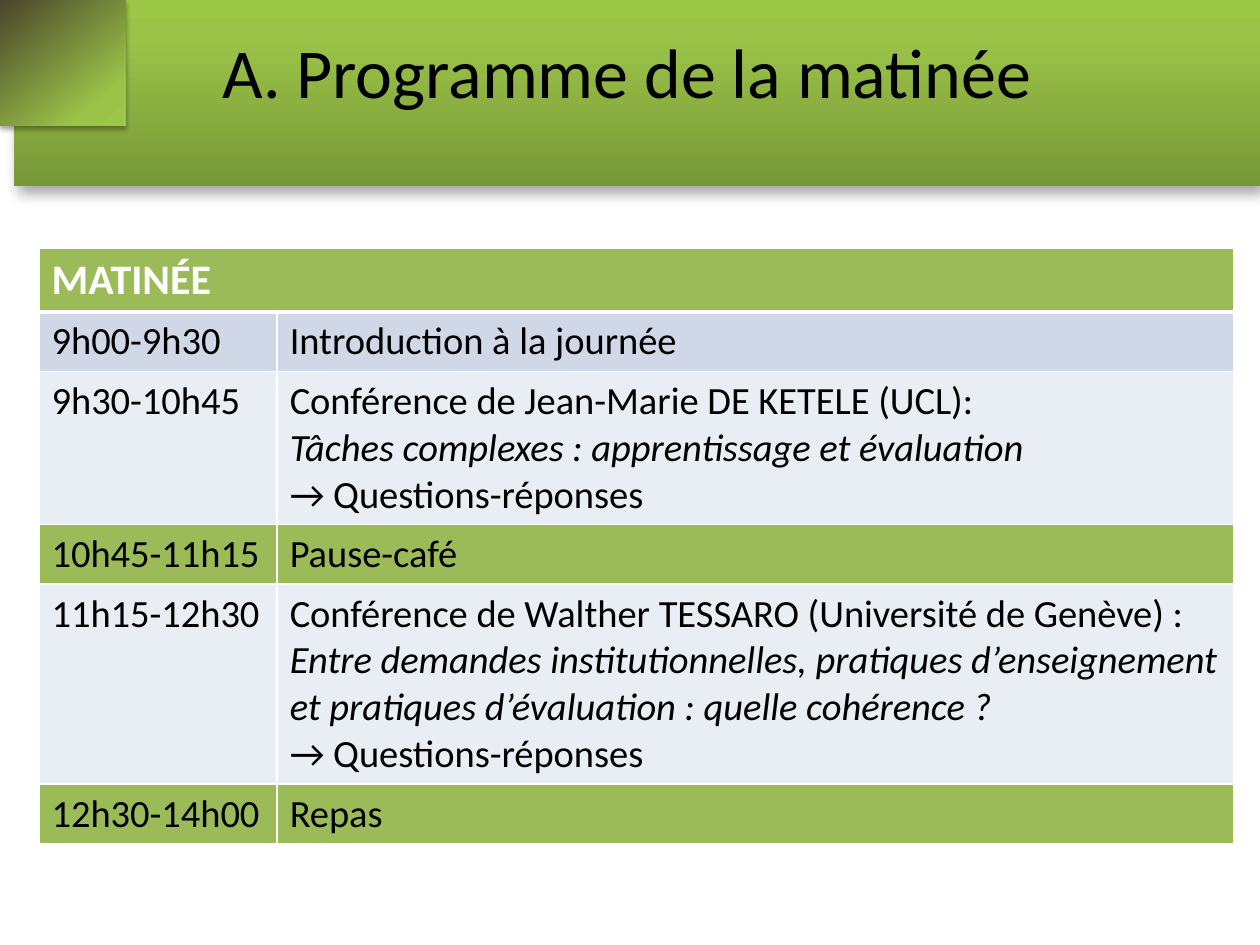
from copy import deepcopy
from lxml.etree import fromstring
from pptx import Presentation
from pptx.dml.color import RGBColor
from pptx.enum.shapes import MSO_SHAPE
from pptx.enum.text import MSO_ANCHOR, PP_ALIGN
from pptx.oxml.ns import qn
from pptx.util import Inches, Pt

NS = 'xmlns:a="http://schemas.openxmlformats.org/drawingml/2006/main"'
hue = RGBColor.from_string


def put(frame, lines, size=22, color="000000", bold=False, align=None, gap=None):
    """Write the lines as paragraphs; a line that starts with * is italic."""
    for n, line in enumerate(lines):
        para = frame.paragraphs[0] if n == 0 else frame.add_paragraph()
        para.alignment, para.line_spacing = align, gap
        run = para.add_run()
        run.text = line.lstrip("*")
        font = run.font
        font.name, font.size, font.bold = "Calibri", Pt(size), bold
        font.italic = line.startswith("*")
        font.color.rgb = hue(color)


deck = Presentation()
deck.slide_width, deck.slide_height = Inches(10), Inches(7.5)
slide = deck.slides.add_slide(deck.slide_layouts[5])
shapes = slide.shapes

# Banner and hexagon
band = shapes.add_shape(MSO_SHAPE.RECTANGLE, Inches(0.11), 0, Inches(9.89), Inches(1.48))
dots = [(0, 0.09), (0.11, 0), (0.73, 0.31), (0.73, 1.16), (0.11, 1.47), (0, 1.41)]
pen = shapes.build_freeform(*dots[0], scale=Inches(1))
pen.add_line_segments(dots[1:], close=True)
hexa = pen.convert_to_shape()

# Gradient, angle, then shadow blur, distance and direction
looks = [(band, "779737", 90, 8, 5, 60), (hexa, "4A452A", 310, 3.1, 1.8, 90)]
for shape, dark, angle, blur, dist, way in looks:
    shape.line.fill.background()
    shape.fill.gradient()
    shape.fill.gradient_angle = angle
    props = shape._element.spPr
    stops = props.find(".//" + qn("a:gsLst"))
    stops.append(deepcopy(stops[-1]))
    tones = [(0, dark), (0.8, "9BC348"), (1, "9DC746")]
    for stop, (place, tone) in zip(shape.fill.gradient_stops, tones):
        stop.position, stop.color.rgb = place, hue(tone)
    props.append(fromstring(
        f'<a:effectLst {NS}><a:outerShdw blurRad="{Pt(blur)}" dist="{Pt(dist)}" '
        f'dir="{way * 60000}" rotWithShape="0"><a:srgbClr val="000000">'
        '<a:alpha val="35000"/></a:srgbClr></a:outerShdw></a:effectLst>'))

# Title, in front of the banner
title = shapes.title
title.left, title.top = Inches(0.78), 0
title.width, title.height = Inches(8.39), Inches(1.25)
title.text_frame.vertical_anchor = MSO_ANCHOR.MIDDLE
put(title.text_frame, ["A. Programme de la matinée"], size=40,
    align=PP_ALIGN.CENTER, gap=0.8)
hexa._element.addnext(title._element)

# Timetable
green, blue, pale = "9BBB59", "D0D8E8", "E9EDF4"
ask = "→ Questions-réponses"
rows = [
    (green, "MATINÉE", []),
    (blue, "9h00-9h30", ["Introduction à la journée"]),
    (pale, "9h30-10h45", ["Conférence de Jean-Marie DE KETELE (UCL):",
                          "*Tâches complexes : apprentissage et évaluation", ask]),
    (green, "10h45-11h15", ["Pause-café"]),
    (pale, "11h15-12h30", ["Conférence de Walther TESSARO (Université de Genève) :",
                           "*Entre demandes institutionnelles, pratiques d’enseignement "
                           "et pratiques d’évaluation : quelle cohérence ?", ask]),
    (green, "12h30-14h00", ["Repas"]),
]
high = Inches(0.41)
table = shapes.add_table(len(rows), 2, Inches(0.31), Inches(1.97),
                         Inches(9.48), high * len(rows)).table
table.columns[0].width, table.columns[1].width = Inches(1.89), Inches(7.59)
table.cell(0, 0).merge(table.cell(0, 1))

for r, (tone, time, event) in enumerate(rows):
    table.rows[r].height = high
    form = dict(size=24, color="FFFFFF", bold=True) if r == 0 else {}
    for c, lines in enumerate([[time], event]):
        cell = table.cell(r, c)
        cell.fill.solid()
        cell.fill.fore_color.rgb = hue(tone)
        put(cell.text_frame, lines, **form)
        for n, side in enumerate("LRTB"):
            thick = 3 if (r, side) in [(0, "B"), (1, "T")] else 1
            cell._tc.get_or_add_tcPr().insert(n, fromstring(
                f'<a:ln{side} {NS} w="{Pt(thick)}"><a:solidFill>'
                f'<a:srgbClr val="FFFFFF"/></a:solidFill></a:ln{side}>'))

deck.save("out.pptx")
